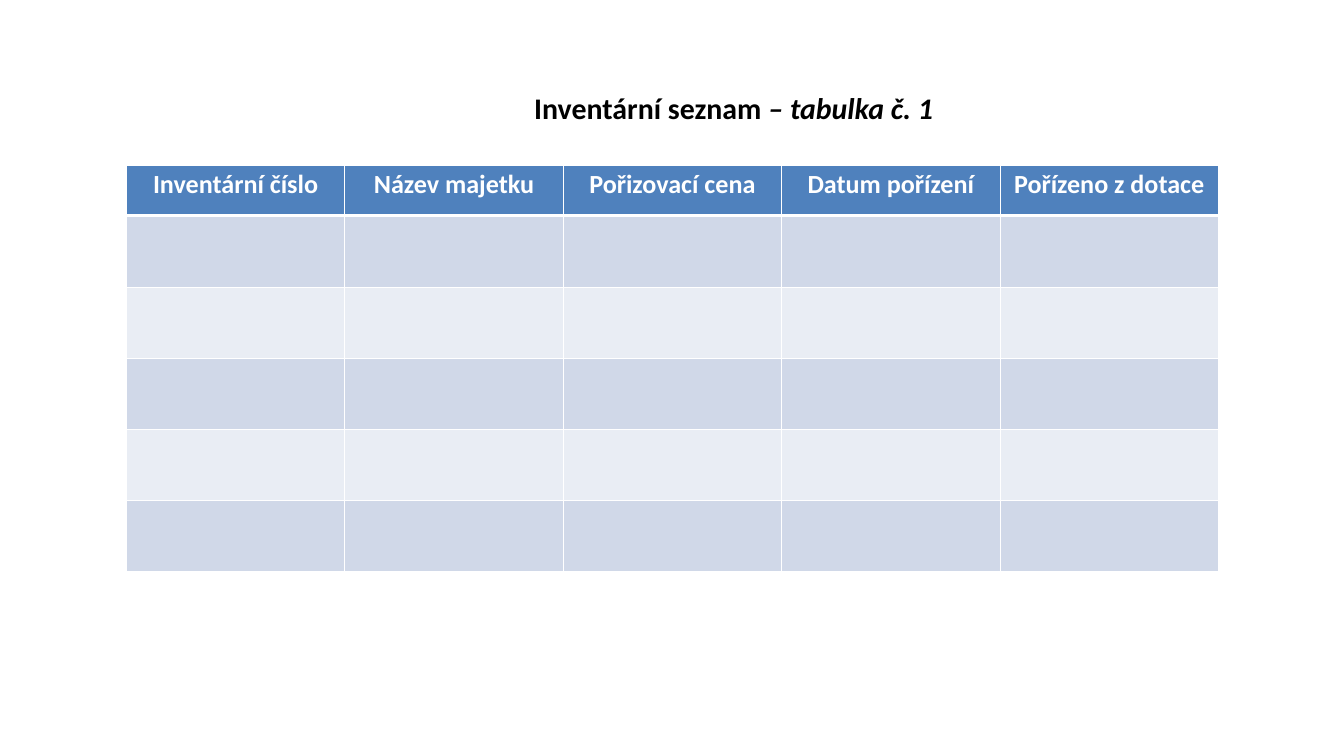
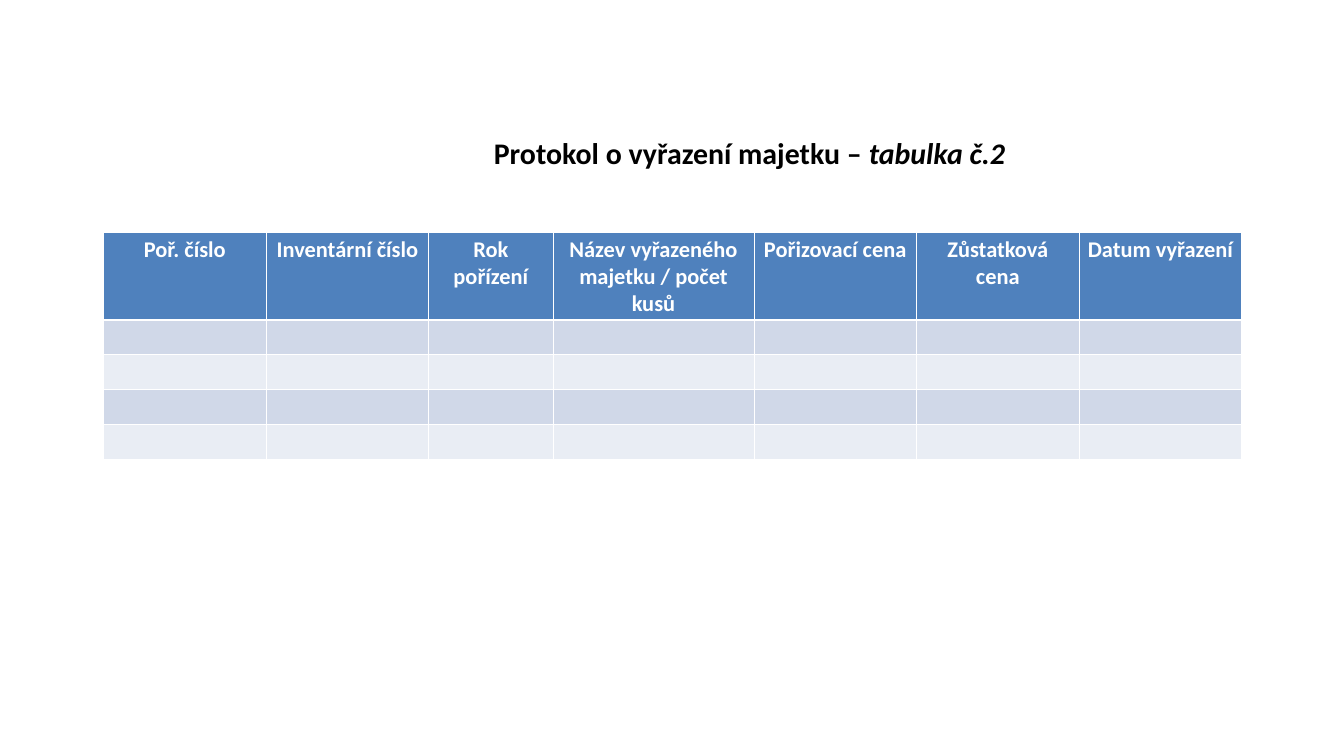
from pptx import Presentation
from pptx.dml.color import RGBColor
from pptx.enum.text import MSO_AUTO_SIZE, PP_ALIGN
from pptx.oxml.ns import qn
from pptx.util import Pt
from lxml.etree import SubElement

PX = 9144  # EMU in one px, 100 px to the inch
WIDE, HIGH = 2000, 1125
FONT = "Calibri"
BLACK = RGBColor(0, 0, 0)
WHITE = RGBColor(0xFF, 0xFF, 0xFF)
BLUE = RGBColor(0x4F, 0x81, 0xBD)
BANDS = RGBColor(0xD0, 0xD8, 0xE8), RGBColor(0xE9, 0xED, 0xF4)
THIN, THICK = 1, 3

SLIDES = [
    {
        "title": ("Inventární seznam ", "– tabulka č. 1"),
        "box": (785, 129, 617, 64),
        "place": (188, 246),
        "heads": [
            ("Inventární číslo", 325),
            ("Název majetku", 325),
            ("Pořizovací cena", 325),
            ("Datum pořízení", 325),
            ("Pořízeno z dotace", 325),
        ],
        "size": 28,
        "rows": [75] + [106] * 5,
    },
    {
        "title": ("Protokol o vyřazení majetku – ", "tabulka č.2"),
        "box": (725, 196, 790, 64),
        "place": (154, 346),
        "heads": [
            ("Poř. číslo", 242),
            ("Inventární číslo", 242),
            ("Rok pořízení", 185),
            ("Název vyřazeného majetku / počet kusů", 299),
            ("Pořizovací cena", 242),
            ("Zůstatková cena", 242),
            ("Datum vyřazení", 242),
        ],
        "size": 24,
        "rows": [108] + [52] * 4,
    },
]


def emu(*sizes):
    return [size * PX for size in sizes]


def write(frame, text, slant="", size=32, color=BLACK, align=PP_ALIGN.LEFT):
    """Write bold text, followed by an italic part if slant is given."""
    para = frame.paragraphs[0]
    para.alignment = align
    for part, italic in ((text, False), (slant, True)):
        if part:
            run = para.add_run()
            run.text = part
            font = run.font
            font.name, font.size = FONT, Pt(size)
            font.bold, font.italic = True, italic
            font.color.rgb = color


def edge(cell, **widths):
    """Draw white cell borders; widths in points for L, R, T and B."""
    props = cell._tc.get_or_add_tcPr()
    for side, width in widths.items():
        line = SubElement(props, qn(f"a:ln{side}"), w=str(Pt(width)))
        fill = SubElement(line, qn("a:solidFill"))
        SubElement(fill, qn("a:srgbClr"), val=str(WHITE))


def add_title(slide, parts, box):
    frame = slide.shapes.add_textbox(*emu(*box)).text_frame
    frame.word_wrap = False
    frame.auto_size = MSO_AUTO_SIZE.SHAPE_TO_FIT_TEXT
    write(frame, *parts)


def add_grid(slide, place, heads, size, rows):
    wide = sum(width for _, width in heads)
    shape = slide.shapes.add_table(
        len(rows), len(heads), *emu(*place, wide, sum(rows)))
    table = shape.table
    for col, (_, width) in zip(table.columns, heads):
        col.width = width * PX
    for r, high in enumerate(rows):
        table.rows[r].height = high * PX
        for c, (head, _) in enumerate(heads):
            cell = table.cell(r, c)
            edge(cell, L=THIN, R=THIN,
                 T=THICK if r == 1 else THIN,
                 B=THICK if r == 0 else THIN)
            cell.fill.solid()
            cell.fill.fore_color.rgb = BANDS[(r - 1) % 2] if r else BLUE
            if r == 0:
                write(cell.text_frame, head, size=size, color=WHITE,
                      align=PP_ALIGN.CENTER)


def main():
    deck = Presentation()
    deck.slide_width, deck.slide_height = emu(WIDE, HIGH)
    for page in SLIDES:
        slide = deck.slides.add_slide(deck.slide_layouts[6])
        add_grid(slide, page["place"], page["heads"], page["size"],
                 page["rows"])
        add_title(slide, page["title"], page["box"])
    deck.save("out.pptx")


if __name__ == "__main__":
    main()
